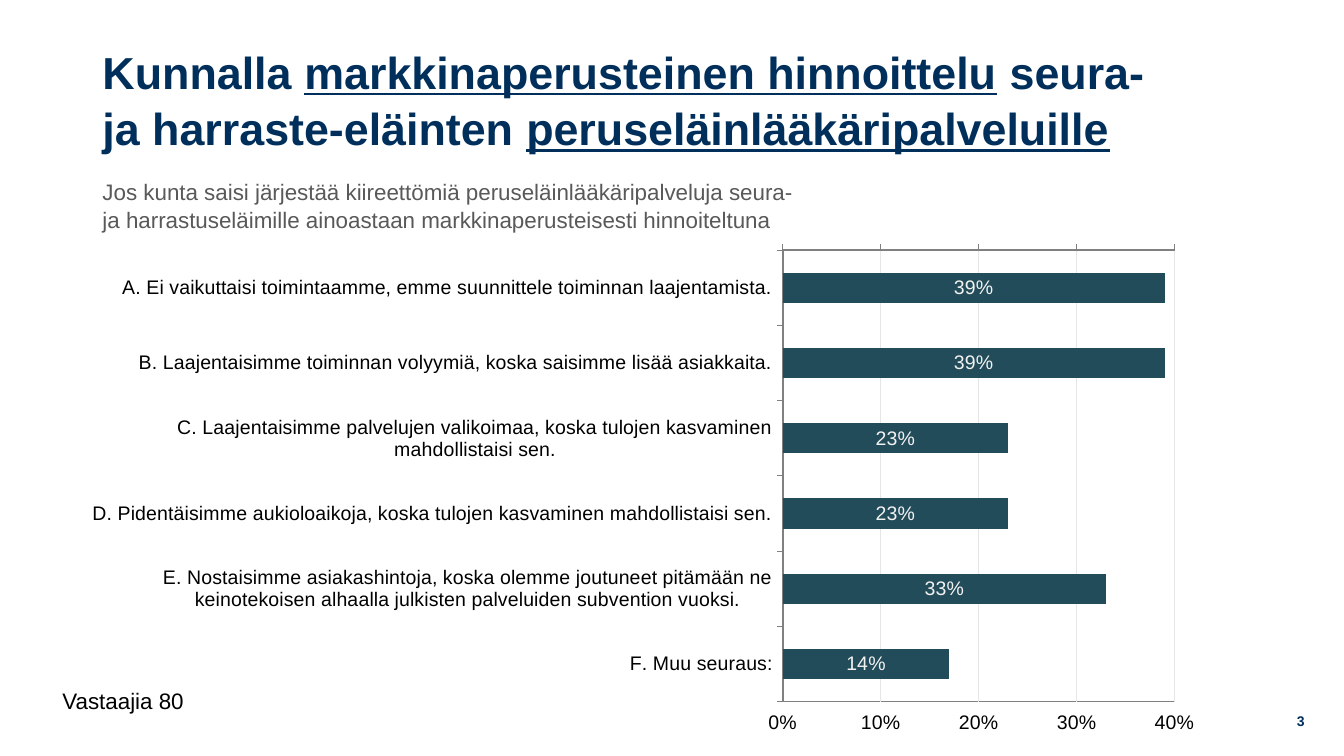
from lxml.etree import SubElement
from pptx import Presentation
from pptx.chart.data import CategoryChartData
from pptx.dml.color import RGBColor
from pptx.enum.chart import XL_CHART_TYPE, XL_LABEL_POSITION, XL_TICK_LABEL_POSITION, XL_TICK_MARK
from pptx.enum.text import MSO_ANCHOR, MSO_AUTO_SIZE, PP_ALIGN
from pptx.oxml import parse_xml
from pptx.oxml.ns import nsdecls, qn
from pptx.util import Pt

NAVY = RGBColor(0x00, 0x2F, 0x5B)
GREY = RGBColor(0x59, 0x59, 0x59)
BLACK = RGBColor(0x00, 0x00, 0x00)
TEAL = RGBColor(0x23, 0x4C, 0x5A)
LABEL = RGBColor(0xF2, 0xF2, 0xF2)
GRID = RGBColor(0xE6, 0xE6, 0xE6)
AXIS = RGBColor(0x80, 0x80, 0x80)

ANSWERS = [
    ("A. Ei vaikuttaisi toimintaamme, emme suunnittele toiminnan laajentamista.", 0.39),
    ("B. Laajentaisimme toiminnan volyymiä, koska saisimme lisää asiakkaita.", 0.39),
    ("C. Laajentaisimme palvelujen valikoimaa, koska tulojen kasvaminen mahdollistaisi sen.", 0.23),
    ("D. Pidentäisimme aukioloaikoja, koska tulojen kasvaminen mahdollistaisi sen.", 0.23),
    ("E. Nostaisimme asiakashintoja, koska olemme joutuneet pitämään ne "
     "keinotekoisen alhaalla julkisten palveluiden subvention vuoksi.", 0.33),
    ("F. Muu seuraus:", 0.17),
]
PLOT = {"x": 0.61, "y": 0.02, "w": 0.35, "h": 0.9}


class SlideBuilder:
    """Holds the shared style and the current slide."""

    font_name = "Arial"

    def __init__(self, prs):
        self.s = prs.slides.add_slide(prs.slide_layouts[1])

    def style(self, font, size, color, **extra):
        for name, value in {"name": self.font_name, "size": Pt(size), **extra}.items():
            setattr(font, name, value)
        font.color.rgb = color

    def fill_text(self, sp, box, runs, size, color, bold=False, anchor=MSO_ANCHOR.TOP,
                  align=PP_ALIGN.LEFT, spacing=1.0):
        for name, value in zip(("left", "top", "width", "height"), box):
            setattr(sp, name, Pt(value))
        tf = sp.text_frame
        for name, value in {"word_wrap": True, "auto_size": MSO_AUTO_SIZE.NONE,
                            "vertical_anchor": anchor}.items():
            setattr(tf, name, value)
        p = tf.paragraphs[0]
        for name, value in {"alignment": align, "line_spacing": spacing,
                            "space_before": Pt(0)}.items():
            setattr(p, name, value)
        for text, underline in runs:
            r = p.add_run()
            r.text = text
            self.style(r.font, size, color, bold=bold, underline=underline)
        return p

    def title(self, box, runs):
        self.fill_text(self.s.shapes.title, box, runs, 32, NAVY, bold=True,
                       anchor=MSO_ANCHOR.MIDDLE, spacing=1.05)

    def body(self, box, text):
        p = self.fill_text(self.s.placeholders[1], box, [(text, False)], 16, GREY, spacing=1.05)
        pPr = p._p.get_or_add_pPr()
        pPr.set("marL", "0")
        pPr.set("indent", "0")
        SubElement(pPr, qn("a:buNone"))

    def text(self, box, text, size, color, **options):
        sp = self.s.shapes.add_textbox(*map(Pt, box))
        self.fill_text(sp, box, [(text, False)], size, color, **options)

    def bar_chart(self, box, answers):
        data = CategoryChartData(number_format="0%")
        data.categories = [name for name, _ in answers]
        data.add_series("Series 1", [value for _, value in answers])
        chart = self.s.shapes.add_chart(
            XL_CHART_TYPE.BAR_CLUSTERED, *map(Pt, box), data).chart
        chart.has_legend = chart.has_title = False
        self.style(chart.font, 14, BLACK)
        self.axes(chart)
        self.bars(chart.plots[0])
        self.plot_area(chart)

    def axes(self, chart):
        for axis in (chart.category_axis, chart.value_axis):
            axis.major_tick_mark = XL_TICK_MARK.OUTSIDE
            axis.minor_tick_mark = XL_TICK_MARK.NONE
            axis.format.line.color.rgb = AXIS
            axis.format.line.width = Pt(0.75)
            self.style(axis.tick_labels.font, 14, BLACK)
        chart.category_axis.reverse_order = True
        for name, value in {"minimum_scale": 0, "maximum_scale": 0.4, "major_unit": 0.1,
                            "tick_label_position": XL_TICK_LABEL_POSITION.HIGH}.items():
            setattr(axis, name, value)
        axis.tick_labels.number_format = "0%"
        axis.tick_labels.number_format_is_linked = False
        axis.major_gridlines.format.line.color.rgb = GRID
        axis.major_gridlines.format.line.width = Pt(0.75)

    def bars(self, plot):
        plot.gap_width = 150
        plot.vary_by_categories = False
        series = plot.series[0]
        series.format.fill.solid()
        series.format.fill.fore_color.rgb = TEAL
        labels = series.data_labels
        for name, value in {"show_value": True, "position": XL_LABEL_POSITION.CENTER,
                            "number_format": "0%", "number_format_is_linked": False}.items():
            setattr(labels, name, value)
        self.style(labels.font, 14, LABEL)
        label = series.points[5].data_label
        r = label.text_frame.paragraphs[0].add_run()
        r.text = "14%"
        self.style(r.font, 14, LABEL)
        label.position = XL_LABEL_POSITION.CENTER

    def plot_area(self, chart):
        area = chart._chartSpace.chart.plotArea
        for old in area.findall(qn("c:layout")):
            area.remove(old)
        modes = "".join(f'<c:{key}Mode val="edge"/>' for key in "xy")
        sizes = "".join(f'<c:{key} val="{value}"/>' for key, value in PLOT.items())
        area.insert(0, parse_xml(
            f'<c:layout {nsdecls("c")}><c:manualLayout><c:layoutTarget val="inner"/>'
            f'{modes}{sizes}</c:manualLayout></c:layout>'))
        area.append(parse_xml(
            f'<c:spPr {nsdecls("c", "a")}><a:solidFill><a:srgbClr val="FFFFFF"/></a:solidFill>'
            f'<a:ln w="{Pt(1)}"><a:solidFill><a:srgbClr val="{AXIS}"/></a:solidFill></a:ln></c:spPr>'))


def main():
    prs = Presentation()
    prs.slide_width, prs.slide_height = Pt(960), Pt(540)
    slide = SlideBuilder(prs)
    slide.title((66, 18, 766, 104.5), [
        ("Kunnalla ", False), ("markkinaperusteinen hinnoittelu", True),
        (" seura- ja harraste-eläinten ", False), ("peruseläinlääkäripalveluille", True)])
    slide.body((66, 122.5, 510.5, 97),
               "Jos kunta saisi järjestää kiireettömiä peruseläinlääkäripalveluja seura- "
               "ja harrastuseläimille ainoastaan markkinaperusteisesti hinnoiteltuna")
    slide.text((723, 500.5, 216, 29), "3", 10, NAVY, bold=True,
               anchor=MSO_ANCHOR.MIDDLE, align=PP_ALIGN.RIGHT)
    slide.bar_chart((66, 171.5, 805, 358.5), ANSWERS)
    slide.text((37.5, 487.5, 147.5, 51), "Vastaajia 80", 16, BLACK)
    prs.save("out.pptx")


if __name__ == "__main__":
    main()
